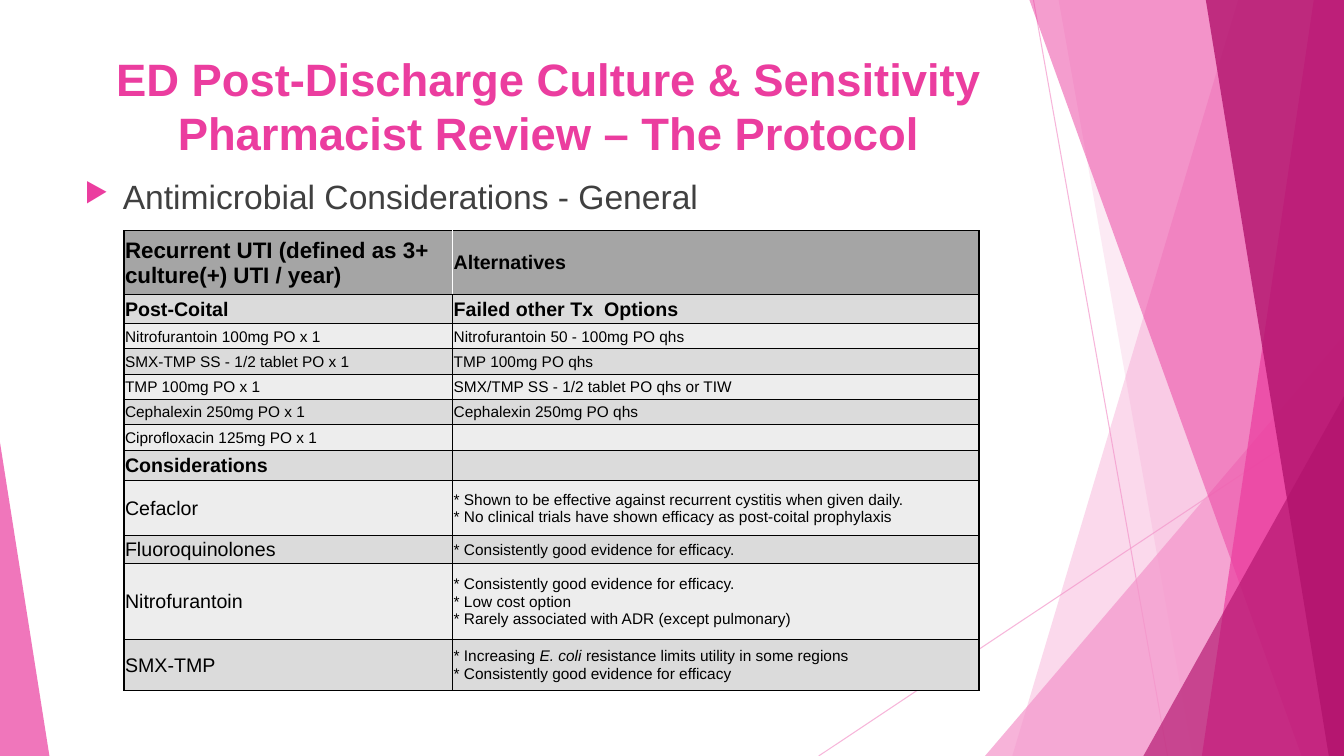
from dataclasses import dataclass

from lxml import etree
from pptx import Presentation
from pptx import util as u
from pptx.dml.color import RGBColor
from pptx.enum import shapes, text
from pptx.oxml.ns import qn

WIDE, HIGH = 13.33, 7.5
FONT = "Arial"
PALE = RGBColor(0xF4, 0x96, 0xCB)
PINK = RGBColor(0xEB, 0x3D, 0x9F)
PLUM = RGBColor(0xB2, 0x13, 0x6D)
WHITE = RGBColor(0xFF, 0xFF, 0xFF)
BLACK = RGBColor(0, 0, 0)
GREY = RGBColor(0x40, 0x40, 0x40)
HEAD = RGBColor(0xA5, 0xA5, 0xA5)
DARK = RGBColor(0xDB, 0xDB, 0xDB)
LIGHT = RGBColor(0xED, 0xED, 0xED)


@dataclass
class Ray:
    start: tuple[float, float]
    end: tuple[float, float]


@dataclass
class Pane:
    """A band that reaches the right edge, with a slanted left side."""
    top: float
    base: float
    color: RGBColor
    alpha: int


@dataclass
class Peak:
    """A right triangle standing on the bottom edge."""
    left: float
    width: float
    height: float
    apex: float
    color: RGBColor
    alpha: int


@dataclass
class Row:
    height: float
    left: str
    right: str
    sizes: tuple[int, int] = (11, 11)
    bold: bool = False


RAYS = [Ray((10.25, 0), (11.58, HIGH)), Ray((WIDE, 4.03), (8.12, HIGH))]
FACETS = [
    Pane(12.28, 10.04, PALE, 36),
    Pane(10.5, 11.83, PALE, 20),
    Peak(9.77, 3.56, 4.17, 1, PALE, 72),
    Pane(10.21, 12.91, PINK, 50),
    Pane(13.03, 11.92, PINK, 70),
    Pane(11.96, 13.18, PLUM, 80),
    Peak(11.34, 1.99, 3.57, 1, PLUM, 66),
    Peak(0, 0.49, 3.11, 0, PINK, 70),
]

# Underscores enclose italic words
ROWS = [
    Row(0.63, "Recurrent UTI (defined as 3+ culture(+) UTI / year)", "Alternatives", (16, 14), True),
    Row(0.29, "Post-Coital", "Failed other Tx  Options", (14, 14), True),
    Row(0.25, "Nitrofurantoin 100mg PO x 1", "Nitrofurantoin 50 - 100mg PO qhs"),
    Row(0.25, "SMX-TMP SS - 1/2 tablet PO x 1", "TMP 100mg PO qhs"),
    Row(0.25, "TMP 100mg PO x 1", "SMX/TMP SS - 1/2 tablet PO qhs or TIW"),
    Row(0.25, "Cephalexin 250mg PO x 1", "Cephalexin 250mg PO qhs"),
    Row(0.26, "Ciprofloxacin 125mg PO x 1", ""),
    Row(0.3, "Considerations", "", (14, 11), True),
    Row(0.54, "Cefaclor",
        "* Shown to be effective against recurrent cystitis when given daily.\n"
        "* No clinical trials have shown efficacy as post-coital prophylaxis", (14, 11)),
    Row(0.28, "Fluoroquinolones", "* Consistently good evidence for efficacy.", (14, 11)),
    Row(0.75, "Nitrofurantoin",
        "* Consistently good evidence for efficacy.\n* Low cost option\n"
        "* Rarely associated with ADR (except pulmonary)", (14, 11)),
    Row(0.51, "SMX-TMP",
        "* Increasing _E. coli _resistance limits utility in some regions\n"
        "* Consistently good evidence for efficacy", (14, 11)),
]
COLS = (3.26, 5.22)
THICK = {0, 1, 7, len(ROWS)}  # heavy rules lie above these rows


def fade(fill, alpha: int) -> None:
    color = fill._xPr.find(qn("a:solidFill"))[0]
    etree.SubElement(color, qn("a:alpha"), val=str(alpha * 1000))


def style(font, size: float, color: RGBColor, bold: bool = False) -> None:
    font.name, font.size, font.bold = FONT, u.Pt(size), bold
    font.color.rgb = color


def draw_ray(slide, ray: Ray) -> None:
    ends = [u.Inches(v) for v in ray.start + ray.end]
    line = slide.shapes.add_connector(shapes.MSO_CONNECTOR.STRAIGHT, *ends)
    line.line.width = u.Pt(0.75)
    line.line.color.rgb = PALE
    fade(line.line.fill, 70)
    etree.SubElement(line._element.spPr, qn("a:effectLst"))


def draw_facet(slide, facet: Pane | Peak) -> None:
    if isinstance(facet, Pane):
        points = [(facet.top, 0), (WIDE, 0), (WIDE, HIGH), (facet.base, HIGH)]
        spots = [(u.Inches(x), u.Inches(y)) for x, y in points]
        pen = slide.shapes.build_freeform(*spots[0])
        pen.add_line_segments(spots[1:], close=True)
        shape = pen.convert_to_shape()
    else:
        box = (facet.left, HIGH - facet.height, facet.width, facet.height)
        shape = slide.shapes.add_shape(
            shapes.MSO_SHAPE.ISOSCELES_TRIANGLE, *map(u.Inches, box))
        shape.adjustments[0] = facet.apex
    shape.shadow.inherit = False
    shape.line.fill.background()
    shape.fill.solid()
    shape.fill.fore_color.rgb = facet.color
    fade(shape.fill, facet.alpha)


def add_title(slide) -> None:
    title = slide.shapes.title
    title.left, title.top, title.width, title.height = map(u.Inches, (0.74, 0.39, 9.4, 1.31))
    frame = title.text_frame
    frame.text = "ED Post-Discharge Culture & Sensitivity Pharmacist Review – The Protocol"
    frame.word_wrap = True
    frame.vertical_anchor = text.MSO_ANCHOR.MIDDLE
    para = frame.paragraphs[0]
    para.alignment = text.PP_ALIGN.CENTER
    style(para.runs[0].font, 32.4, PINK, True)


def add_topic(slide) -> None:
    box = slide.shapes.add_textbox(*map(u.Inches, (0.74, 1.7, 9.4, 0.55)))
    box.text_frame.word_wrap = True
    para = box.text_frame.paragraphs[0]
    para.text = "Antimicrobial Considerations - General"
    para.space_before = u.Pt(10)
    style(para.runs[0].font, 24, GREY)
    props = para._p.get_or_add_pPr()
    props.set("marL", str(u.Inches(0.38)))
    props.set("indent", str(-u.Inches(0.38)))
    tint = etree.SubElement(props, qn("a:buClr"))
    etree.SubElement(tint, qn("a:srgbClr"), val=str(PINK))
    etree.SubElement(props, qn("a:buSzPct"), val="80000")
    etree.SubElement(props, qn("a:buChar"), char="▶")


def add_rule(cell, side: str, color: RGBColor, width: float) -> None:
    props = cell._tc.get_or_add_tcPr()
    line = etree.SubElement(props, qn("a:ln" + side), w=str(u.Pt(width)))
    fill = etree.SubElement(line, qn("a:solidFill"))
    etree.SubElement(fill, qn("a:srgbClr"), val=str(color))


def fill_cell(cell, words: str, size: int, bold: bool) -> None:
    cell.vertical_anchor = text.MSO_ANCHOR.MIDDLE
    cell.margin_left = cell.margin_right = cell.margin_top = u.Inches(0.01)
    cell.margin_bottom = 0
    para = cell.text_frame.paragraphs[0]
    for n, line in enumerate(words.split("\n") if words else []):
        if n:
            para.add_line_break()
        for k, part in enumerate(line.split("_")):
            run = para.add_run()
            run.text = part
            style(run.font, size, BLACK, bold)
            run.font.italic = k % 2 == 1
    if not words:
        etree.SubElement(para._p, qn("a:endParaRPr"), sz=str(size * 100))


def add_grid(slide) -> None:
    area = (1.23, 2.29, sum(COLS), sum(row.height for row in ROWS))
    table = slide.shapes.add_table(len(ROWS), len(COLS), *map(u.Inches, area)).table
    for col, width in zip(table.columns, COLS):
        col.width = u.Inches(width)
    for r, row in enumerate(ROWS):
        table.rows[r].height = u.Inches(row.height)
        shade = HEAD if r == 0 else DARK if r % 2 else LIGHT
        for c, words in enumerate((row.left, row.right)):
            cell = table.cell(r, c)
            fill_cell(cell, words, row.sizes[c], row.bold)
            for side, inner in (("L", c == 1), ("R", c == 0)):
                split = r == 0 and inner
                add_rule(cell, side, WHITE if split else BLACK, 0.5 if split else 1)
            for side, edge in (("T", r), ("B", r + 1)):
                add_rule(cell, side, BLACK, 1 if edge in THICK else 0.5)
            cell.fill.solid()
            cell.fill.fore_color.rgb = shade


def main() -> None:
    deck = Presentation()
    deck.slide_width, deck.slide_height = u.Inches(WIDE), u.Inches(HIGH)
    slide = deck.slides.add_slide(deck.slide_layouts[5])
    # Backdrop
    for ray in RAYS:
        draw_ray(slide, ray)
    for facet in FACETS:
        draw_facet(slide, facet)
    # Content
    add_title(slide)
    add_topic(slide)
    add_grid(slide)
    deck.save("out.pptx")


if __name__ == "__main__":
    main()
